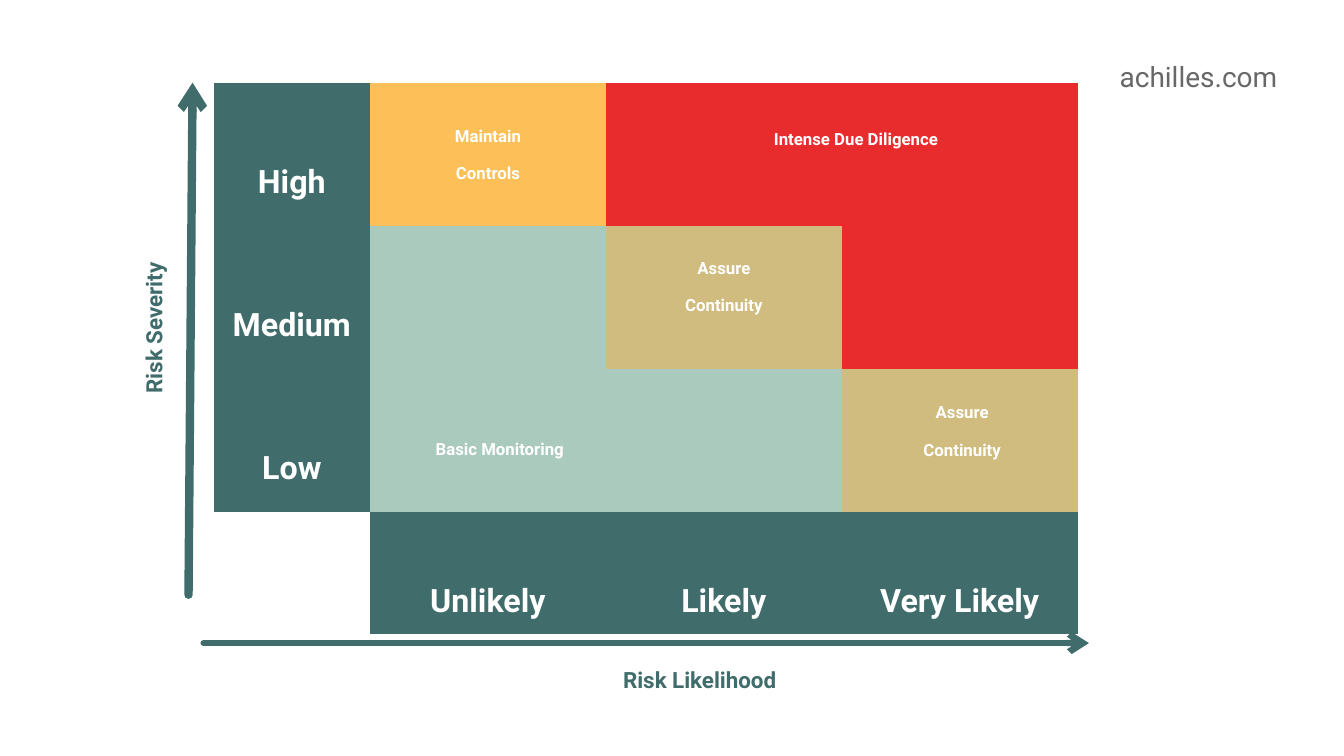
from lxml import etree
from pptx import Presentation
from pptx import util as u
from pptx.dml.color import RGBColor
from pptx.enum import shapes, text
from pptx.oxml.ns import qn

COLORS = {
    "axis": "406C6B", "maintain": "FDC058", "intense": "E82C2E",
    "basic": "AACABE", "assure": "D1BC80", "white": "FFFFFF", "grey": "686868",
}
NO_STYLE = "{2D5ABB26-0587-4C30-8999-92F81FD0307C}"
HEAD_W, COL_W = 1.55, 2.34
ROW_H, FOOT_H = 1.42, 1.21
LABEL_W, LINE_H = 2.3, 0.35

SEVERITIES = ["High", "Medium", "Low"]
LIKELIHOODS = ["Unlikely", "Likely", "Very Likely"]
ZONES = [
    ["maintain", "intense", "intense"],
    ["basic", "assure", "intense"],
    ["basic", "basic", "assure"],
]
# lines, centre in likelihood columns, top in severity rows
ZONE_LABELS = [
    (["Basic Monitoring"], 0.55, 2.37),
    (["Assure", "Continuity"], 1.5, 1.1),
    (["Maintain", "Controls"], 0.5, 0.18),
    (["Assure", "Continuity"], 2.51, 2.11),
    (["Intense Due Diligence"], 2.06, 0.2),
]


def rgb(name):
    return RGBColor.from_string(COLORS[name])


def write(tf, lines, size, color, bold=True, spacing=None, align=text.PP_ALIGN.CENTER):
    for i, line in enumerate(lines):
        p = tf.add_paragraph() if i else tf.paragraphs[0]
        p.alignment = align
        if spacing:
            p.line_spacing = u.Pt(spacing)
        r = p.add_run()
        r.text = line
        r.font.name, r.font.size, r.font.bold = "Roboto", u.Pt(size), bold
        r.font.color.rgb = rgb(color)


def add_label(s, cx, top, lines, size, color):
    """Place a tight centred label and return it."""
    sp = s.shapes.add_textbox(u.Inches(cx - LABEL_W / 2), u.Inches(top),
                              u.Inches(LABEL_W), u.Inches(LINE_H * len(lines)))
    tf = sp.text_frame
    tf.word_wrap = True
    tf.margin_left = tf.margin_right = tf.margin_top = tf.margin_bottom = 0
    write(tf, lines, size, color, spacing=26.7)
    return sp


def add_arrow(s, start, end, width):
    line = s.shapes.add_connector(shapes.MSO_CONNECTOR.STRAIGHT,
                                  *(u.Inches(v) for v in (*start, *end)))
    line.line.color.rgb = rgb("axis")
    line.line.width = u.Pt(width)
    ln = line.line._get_or_add_ln()
    ln.set("cap", "rnd")
    etree.SubElement(ln, qn("a:round"))
    etree.SubElement(ln, qn("a:tailEnd"), type="arrow")
    etree.SubElement(line._element.spPr, qn("a:effectLst"))


def style_cell(cell, color, label=None):
    tcPr = cell._tc.get_or_add_tcPr()
    for side in ("lnL", "lnR", "lnT", "lnB"):
        etree.SubElement(etree.SubElement(tcPr, qn("a:" + side), w="0"), qn("a:noFill"))
    if color:
        cell.fill.solid()
        cell.fill.fore_color.rgb = rgb(color)
    else:
        cell.fill.background()
    if label:
        cell.vertical_anchor = text.MSO_ANCHOR.MIDDLE
        cell.margin_left = cell.margin_right = u.Inches(0.09)
        cell.margin_top = cell.margin_bottom = u.Inches(0.09)
        write(cell.text_frame, [label], 23, "white", spacing=67.2)


def risk_matrix(s, left, top, width, height):
    cols, rows = len(LIKELIHOODS), len(SEVERITIES)
    frame = s.shapes.add_table(rows + 1, cols + 1, *(u.Inches(v) for v in (left, top, width, height)))
    table = frame.table
    table.first_row = table.horz_banding = False
    table._tbl.tblPr.find(qn("a:tableStyleId")).text = NO_STYLE
    for i, col in enumerate(table.columns):
        col.width = u.Inches(COL_W if i else HEAD_W)
    for i, row in enumerate(table.rows):
        row.height = u.Inches(ROW_H if i < rows else FOOT_H)

    for r, severity in enumerate(SEVERITIES):
        style_cell(table.cell(r, 0), "axis", severity)
        for c, zone in enumerate(ZONES[r]):
            style_cell(table.cell(r, c + 1), zone)
    style_cell(table.cell(rows, 0), None)
    for c, likelihood in enumerate(LIKELIHOODS):
        style_cell(table.cell(rows, c + 1), "axis", likelihood)

    for lines, col, row in ZONE_LABELS:
        add_label(s, left + HEAD_W + col * COL_W, top + row * ROW_H, lines, 12, "white")


def axes(s, left, top, width, height):
    """Draw the two arrows and their names around the matrix box."""
    right, bottom = left + width, top + height
    add_arrow(s, (left - 0.1, bottom + 0.09), (right + 0.11, bottom + 0.09), 4.5)
    add_arrow(s, (left - 0.25, bottom - 0.39), (left - 0.21, top), 6)
    add_label(s, left + 4.82, bottom + 0.21, ["Risk Likelihood"], 16, "axis")
    add_label(s, left - 0.66, top + 2.26, ["Risk Severity"], 16, "axis").rotation = 270


def site_address(s, left, top, width, height):
    sp = s.shapes.add_textbox(*(u.Inches(v) for v in (left, top, width, height)))
    sp.text_frame.word_wrap = True
    write(sp.text_frame, ["achilles.com"], 20, "grey", bold=False, align=text.PP_ALIGN.RIGHT)


def main():
    prs = Presentation()
    prs.slide_width, prs.slide_height = u.Inches(13.33), u.Inches(7.5)
    s = prs.slides.add_slide(prs.slide_layouts[6])
    box = (2.12, 0.82, HEAD_W + COL_W * len(LIKELIHOODS), ROW_H * len(SEVERITIES) + FOOT_H)
    site_address(s, 10.41, 0.54, 2.36, 0.44)
    risk_matrix(s, *box)
    axes(s, *box)
    prs.save("out.pptx")


if __name__ == "__main__":
    main()
